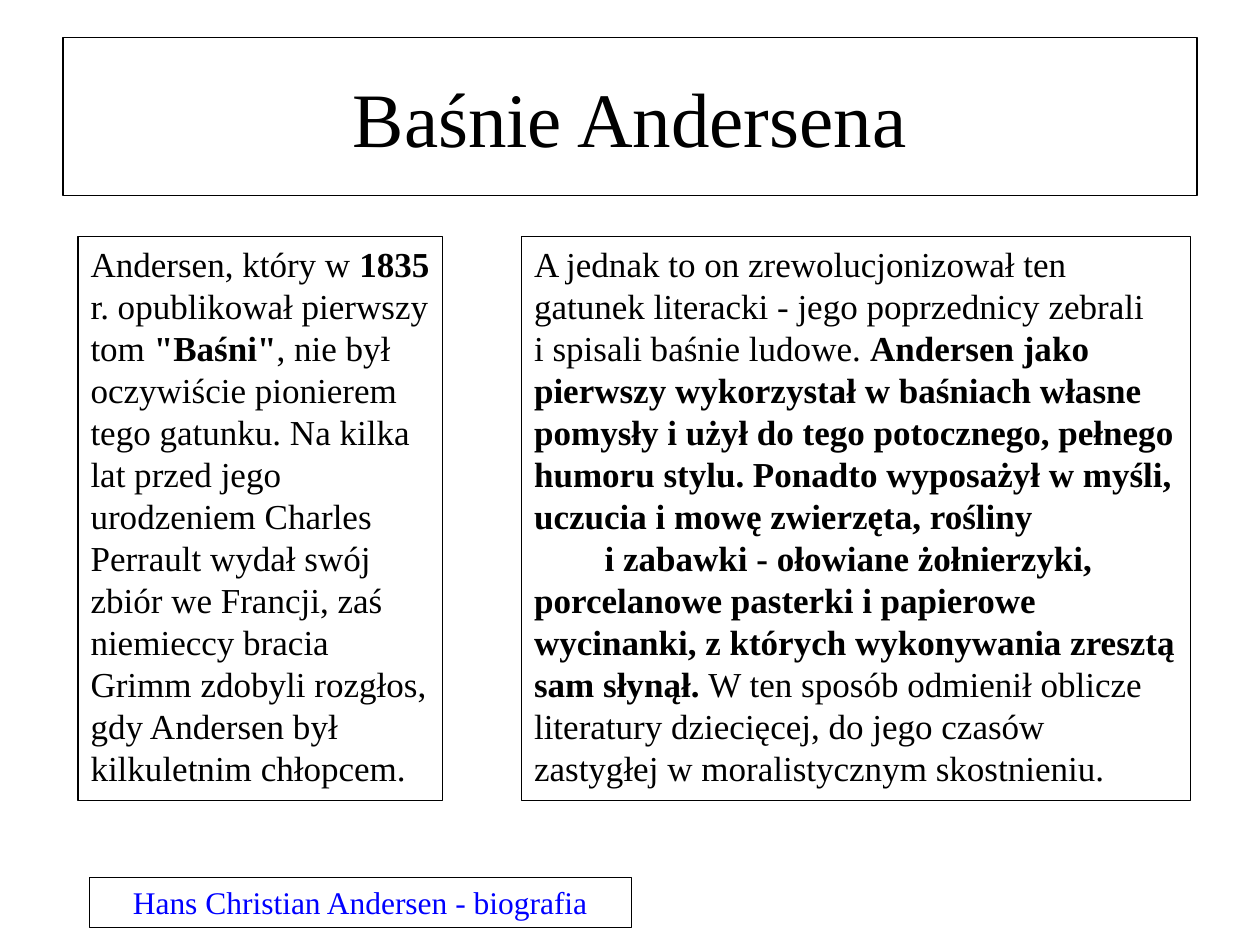
from pptx import Presentation
from pptx.dml.color import RGBColor
from pptx.enum.shapes import MSO_SHAPE as Shape
from pptx.enum.text import MSO_ANCHOR as Anchor, MSO_AUTO_SIZE as AutoSize, PP_ALIGN as Align
from pptx.util import Inches, Pt

WIDTH, HEIGHT = Inches(10), Inches(7.5)
FONT = "Times New Roman"
COLOURS = {"ink": "000000", "link": "0000FF", "paper": "FFFFFF"}

FIRST_TALES = (
    'Andersen, który w *1835* r. opublikował pierwszy tom *"Baśni"*, nie był '
    "oczywiście pionierem tego gatunku. Na kilka lat przed jego urodzeniem "
    "Charles Perrault wydał swój zbiór we Francji, zaś niemieccy bracia Grimm "
    "zdobyli rozgłos, gdy Andersen był kilkuletnim chłopcem."
)
REVOLUTION = (
    "A jednak to on zrewolucjonizował ten gatunek literacki - jego poprzednicy "
    "zebrali\ni spisali baśnie ludowe. *Andersen jako pierwszy wykorzystał w "
    "baśniach własne pomysły i użył do tego potocznego, pełnego humoru stylu. "
    "Ponadto wyposażył w myśli, uczucia i mowę zwierzęta, rośliny*"
)
TOYS = (
    "*i zabawki - ołowiane żołnierzyki, porcelanowe pasterki i papierowe "
    "wycinanki, z których wykonywania zresztą sam słynął. *W ten sposób odmienił "
    "oblicze literatury dziecięcej, do jego czasów zastygłej w moralistycznym "
    "skostnieniu."
)


def colour(name):
    return RGBColor.from_string(COLOURS[name])


def add_text(para, text, size=20, ink="ink", align=Align.LEFT, indent=0):
    para.alignment = align
    if indent:
        para._p.get_or_add_pPr().set("indent", str(Inches(indent)))
    for part, phrase in enumerate(text.split("*")):
        for row, line in enumerate(phrase.split("\n")):
            if row:
                para.add_line_break()
            if line:
                span = para.add_run()
                span.text = line
                span.font.name = FONT
                span.font.size = Pt(size)
                span.font.bold = part % 2 == 1
                span.font.color.rgb = colour(ink)


def add_box(page, left, top, width, height, fill=None, line=0.75,
            anchor=Anchor.TOP, grow=True):
    box = page.shapes.add_shape(
        Shape.RECTANGLE, int(left * WIDTH), int(top * HEIGHT),
        int(width * WIDTH), int(height * HEIGHT))
    box.shadow.inherit = False
    if fill:
        box.fill.solid()
        box.fill.fore_color.rgb = colour(fill)
    else:
        box.fill.background()
    box.line.color.rgb = colour("ink")
    box.line.width = Pt(line)
    frame = box.text_frame
    frame.word_wrap = True
    frame.vertical_anchor = anchor
    frame.auto_size = AutoSize.SHAPE_TO_FIT_TEXT if grow else AutoSize.NONE
    return frame


def main():
    deck = Presentation()
    deck.slide_width, deck.slide_height = WIDTH, HEIGHT
    page = deck.slides.add_slide(deck.slide_layouts[6])

    link = add_box(page, 0.071, 0.928, 0.43, 0.053, fill="paper", line=0.25)
    add_text(link.paragraphs[0], "Hans Christian Andersen - biografia",
             size=18, ink="link", align=Align.CENTER)

    tales = add_box(page, 0.062, 0.25, 0.289, 0.597)
    add_text(tales.paragraphs[0], FIRST_TALES)

    title = add_box(page, 0.05, 0.04, 0.9, 0.167, anchor=Anchor.MIDDLE, grow=False)
    add_text(title.paragraphs[0], "Baśnie Andersena", size=44, align=Align.CENTER)

    style = add_box(page, 0.414, 0.25, 0.531, 0.597)
    add_text(style.paragraphs[0], REVOLUTION)
    add_text(style.add_paragraph(), TOYS, indent=0.56)

    deck.save("out.pptx")


if __name__ == "__main__":
    main()
